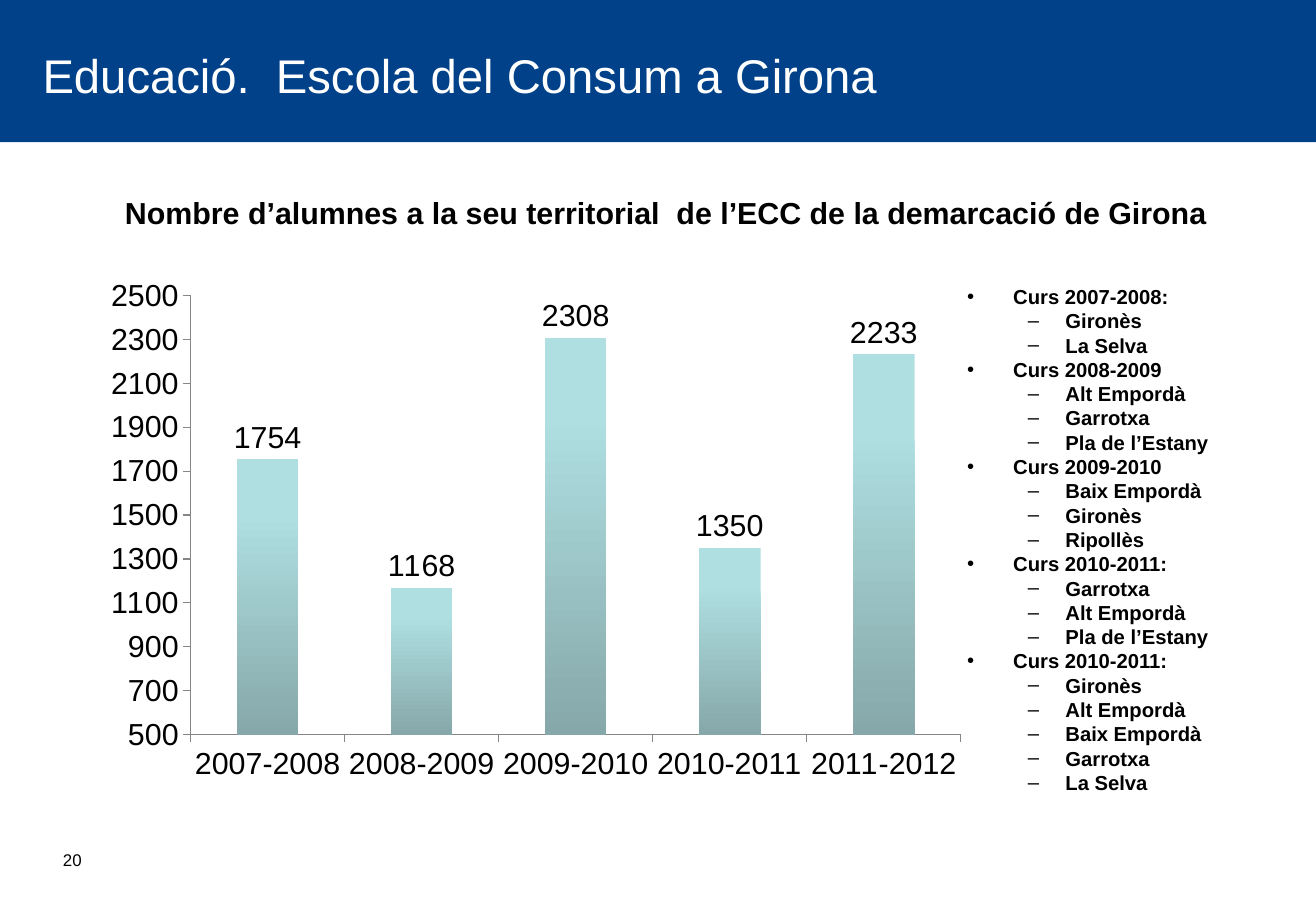
from lxml import etree
from pptx import Presentation
from pptx import util as u
from pptx.chart import data
from pptx.dml.color import RGBColor
from pptx.enum import chart as ch, shapes, text
from pptx.oxml import ns

COLORS = {"blue": "004189", "white": "FFFFFF", "black": "000000",
          "bar_top": "AFDFE1", "bar_bottom": "86A8AA", "axis": "868686"}
STUDENTS = {"2007-2008": 1754, "2008-2009": 1168, "2009-2010": 2308,
            "2010-2011": 1350, "2011-2012": 2233}
COURSES = [
    ("Curs 2007-2008:", ["Gironès", "La Selva"]),
    ("Curs 2008-2009", ["Alt Empordà", "Garrotxa", "Pla de l’Estany"]),
    ("Curs 2009-2010", ["Baix Empordà", "Gironès", "Ripollès"]),
    ("Curs 2010-2011:", ["Garrotxa", "Alt Empordà", "Pla de l’Estany"]),
    ("Curs 2010-2011:", ["Gironès", "Alt Empordà", "Baix Empordà", "Garrotxa", "La Selva"]),
]
# marker, left margin, first-line indent for each list level
LEVELS = [("•", 0.38, -0.38), ("–", 0.81, -0.31)]


def set_font(font, size, color="black", bold=False):
    for name, value in {"name": "Arial", "size": u.Pt(size), "bold": bold}.items():
        setattr(font, name, value)
    font.color.rgb = RGBColor.from_string(COLORS[color])


def place(sp, left, top, width, height, anchor):
    """Position a text shape and return its wrapped, fixed-size text frame."""
    box = {"left": left, "top": top, "width": width, "height": height}
    for name, value in box.items():
        setattr(sp, name, u.Inches(value))
    tf = sp.text_frame
    tf.word_wrap = True
    tf.auto_size = text.MSO_AUTO_SIZE.NONE
    tf.vertical_anchor = anchor
    return tf


prs = Presentation()
prs.slide_width, prs.slide_height = u.Inches(10.83), u.Inches(7.5)
s = prs.slides.add_slide(prs.slide_layouts[5])
TOP, MIDDLE = text.MSO_ANCHOR.TOP, text.MSO_ANCHOR.MIDDLE

# Header band, behind the title
band = s.shapes.add_shape(shapes.MSO_SHAPE.RECTANGLE, 0, 0, prs.slide_width, u.Inches(1.17))
band.shadow.inherit = False
band.fill.solid()
band.fill.fore_color.rgb = RGBColor.from_string(COLORS["blue"])
band.line.fill.background()
s.shapes.title.element.addprevious(band.element)

# Title, chart heading and page number
lines = [
    (s.shapes.title, "Educació.  Escola del Consum a Girona",
     (0.25, 0.24, 7.58, 0.75, MIDDLE), (28, "white")),
    (s.shapes.add_textbox(0, 0, 0, 0),
     "Nombre d’alumnes a la seu territorial  de l’ECC de la demarcació de Girona",
     (0.93, 1.55, 9.19, 0.4, TOP), (18, "black", True)),
    (s.shapes.add_textbox(0, 0, 0, 0), "20", (0.42, 6.83, 2.26, 0.5, MIDDLE), (10,)),
]
for sp, words, box, style in lines:
    p = place(sp, *box).paragraphs[0]
    p.text = words
    p.alignment = text.PP_ALIGN.LEFT
    set_font(p.runs[0].font, *style)

# Students per school year
cd = data.CategoryChartData()
cd.categories = list(STUDENTS)
cd.add_series("Series 1", list(STUDENTS.values()))
chart = s.shapes.add_chart(ch.XL_CHART_TYPE.COLUMN_CLUSTERED, u.Inches(0.69), u.Inches(2.1),
                           u.Inches(7.32), u.Inches(4.63), cd).chart
chart.has_title = chart.has_legend = False
set_font(chart.font, 18)

for axis in (chart.category_axis, chart.value_axis):
    axis.has_major_gridlines = False
    axis.major_tick_mark = ch.XL_TICK_MARK.OUTSIDE
    axis.format.line.color.rgb = RGBColor.from_string(COLORS["axis"])
    axis.format.line.width = u.Pt(0.75)
for name, value in {"minimum_scale": 500, "maximum_scale": 2500, "major_unit": 200}.items():
    setattr(chart.value_axis, name, value)

plot = chart.plots[0]
plot.gap_width = 150
plot.vary_by_categories = False
plot.has_data_labels = True
labels = plot.data_labels
labels.show_value = True
labels.position = ch.XL_LABEL_POSITION.OUTSIDE_END
set_font(labels.font, 18)

fill = plot.series[0].format.fill
fill.gradient()
fill.gradient_angle = 270
for stop, position, color in zip(fill.gradient_stops, (0.2, 1), ("bar_top", "bar_bottom")):
    stop.position = position
    stop.color.rgb = RGBColor.from_string(COLORS[color])

plot_area = chart._chartSpace.chart.plotArea
for old in plot_area.findall(ns.qn("c:layout")):
    plot_area.remove(old)
layout = etree.Element(ns.qn("c:layout"))
manual = etree.SubElement(layout, ns.qn("c:manualLayout"))
for tag, value in [("layoutTarget", "inner"), ("xMode", "edge"), ("yMode", "edge"),
                   ("x", 0.12), ("y", 0.072), ("w", 0.866), ("h", 0.781)]:
    etree.SubElement(manual, ns.qn("c:" + tag), val=str(value))
plot_area.insert(0, layout)

# Counties visited in each course
tf = place(s.shapes.add_textbox(0, 0, 0, 0), 7.86, 2.33, 2.68, 4.72, TOP)
items = [(level, words) for course, counties in COURSES
         for level, words in [(0, course)] + [(1, county) for county in counties]]
for i, (level, words) in enumerate(items):
    p = tf.add_paragraph() if i else tf.paragraphs[0]
    marker, margin, indent = LEVELS[level]
    pPr = p._p.get_or_add_pPr()
    pPr.set("marL", str(u.Inches(margin)))
    pPr.set("indent", str(u.Inches(indent)))
    etree.SubElement(pPr, ns.qn("a:buFont"), typeface="Arial")
    etree.SubElement(pPr, ns.qn("a:buChar"), char=marker)
    p.level = level
    p.line_spacing = 0.8
    p.space_before = u.Pt(2.9 if i else 0)
    r = p.add_run()
    r.text = words
    set_font(r.font, 12, bold=True)

prs.save("out.pptx")
